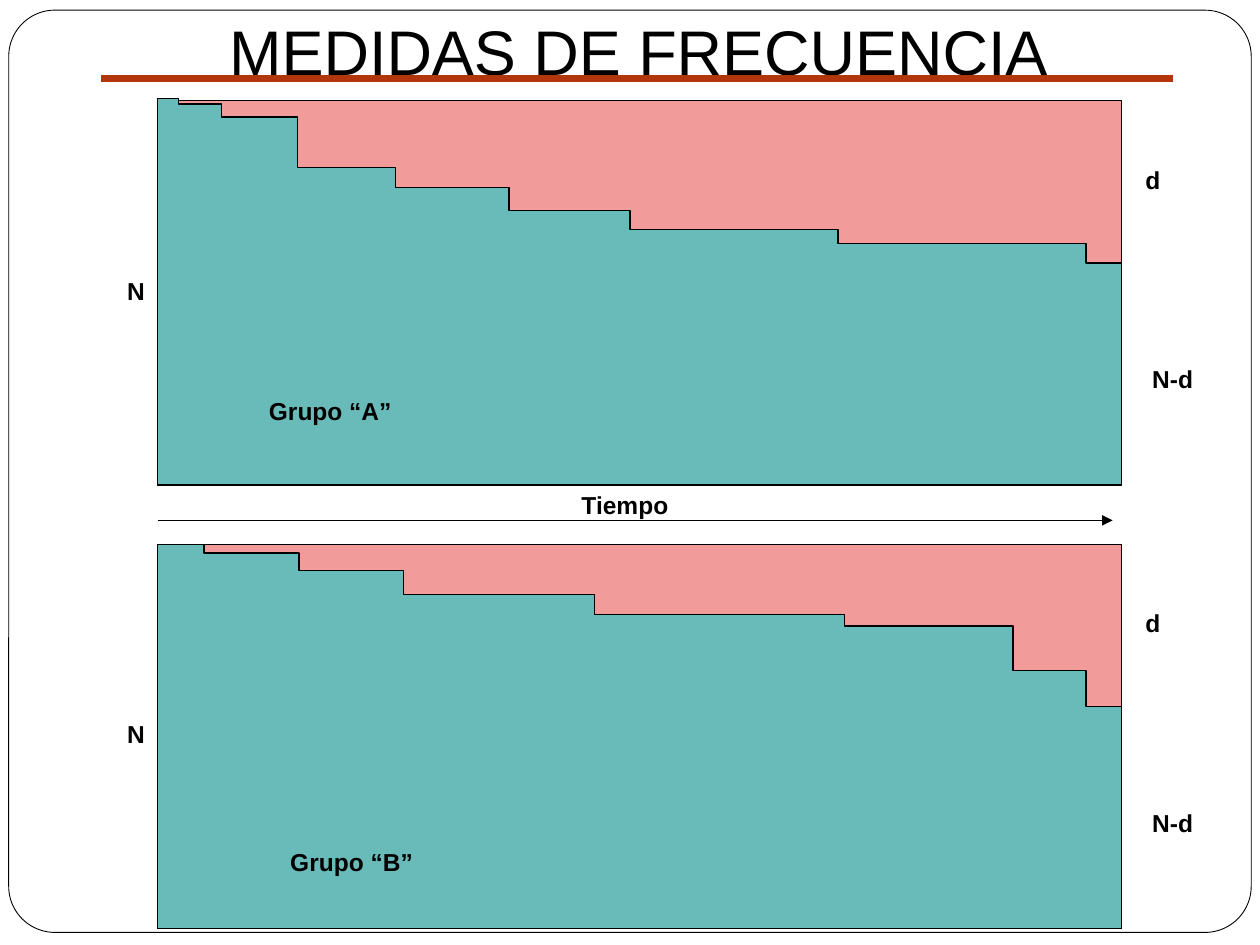
from dataclasses import dataclass
from lxml import etree
from pptx import Presentation
from pptx.dml.color import RGBColor as RGB
from pptx.enum.shapes import MSO_CONNECTOR as CONN, MSO_SHAPE as SHAPE
from pptx.enum.text import MSO_ANCHOR as ANCHOR, PP_ALIGN as ALIGN
from pptx.oxml.ns import qn
from pptx.util import Pt


@dataclass(frozen=True)
class Theme:
    font: str = "Arial"
    title: float = 36
    label: float = 14
    ink: RGB = RGB(0, 0, 0)
    paper: RGB = RGB(0xFF, 0xFF, 0xFF)
    rule: RGB = RGB(0xB1, 0x36, 0x0B)
    lost: RGB = RGB(0xF1, 0x9B, 0x9B)
    kept: RGB = RGB(0x69, 0xBB, 0xB9)


THEME = Theme()
LEFT, WIDTH, HEIGHT = 90, 550.8, 219.7

# Each step: right edge, drop below the panel top
STEPS_A = [(102.2, -1), (126.7, 1.9), (169.9, 9.4), (226.1, 38.2), (290.9, 49.7),
           (360, 63), (478.8, 73.8), (620.6, 81.7), (640.8, 92.9)]
STEPS_B = [(116.6, 0), (170.8, 5), (230.4, 15.1), (339.8, 28.8), (482.6, 40.3),
           (578.9, 46.8), (620.6, 72), (640.8, 92.9)]


def paint(shape, fill, width):
    shape.shadow.inherit = False
    shape.fill.solid()
    shape.fill.fore_color.rgb = fill
    shape.line.color.rgb = THEME.ink
    shape.line.width = Pt(width)


def add_text(slide, text, box, align=ALIGN.LEFT, size=THEME.label, bold=True,
             anchor=ANCHOR.TOP):
    frame = slide.shapes.add_textbox(*map(Pt, box)).text_frame
    frame.word_wrap = True
    frame.vertical_anchor = anchor
    frame.margin_left = frame.margin_right = Pt(0.7)
    frame.margin_top = frame.margin_bottom = Pt(0.7)
    par = frame.paragraphs[0]
    par.text = text
    par.alignment = align
    par.font.name = THEME.font
    par.font.size = Pt(size)
    par.font.bold = bold
    par.font.color.rgb = THEME.ink


def add_line(slide, start, end, y, color, width, arrow=False):
    line = slide.shapes.add_connector(CONN.STRAIGHT, Pt(start), Pt(y), Pt(end), Pt(y))
    line.line.color.rgb = color
    line.line.width = Pt(width)
    if arrow:
        etree.SubElement(line.line._get_or_add_ln(), qn("a:tailEnd"), type="triangle")
    etree.SubElement(line._element.spPr, qn("a:effectLst"))


def add_area(slide, points, fill):
    first, *rest = [(Pt(x), Pt(y)) for x, y in points]
    form = slide.shapes.build_freeform(*first, scale=1.0)
    form.add_line_segments(rest, close=True)
    paint(form.convert_to_shape(), fill, 0.75)


def add_panel(slide, top, steps, name, spot):
    right, base = LEFT + WIDTH, top + HEIGHT
    add_area(slide, [(LEFT, top), (right, top), (right, base), (LEFT, base)], THEME.lost)

    # Staircase of those who remain
    points, x = [(LEFT, base)], LEFT
    for edge, drop in steps:
        points += [(x, top + drop), (edge, top + drop)]
        x = edge
    add_area(slide, points + [(right, base)], THEME.kept)

    # Labels
    add_text(slide, "N", (72, top + 99.4, 21, 28.8))
    add_text(slide, "d", (653.8, top + 36, 31.7, 28.8))
    add_text(slide, "N-d", (657.7, top + 149.8, 40, 28.1))
    add_text(slide, name, (*spot, 149.8, 23.8), ALIGN.CENTER)


def main():
    deck = Presentation()
    deck.slide_width, deck.slide_height = Pt(720), Pt(540)
    slide = deck.slides.add_slide(deck.slide_layouts[6])

    # Frame
    frame = slide.shapes.add_shape(SHAPE.ROUNDED_RECTANGLE, Pt(5), Pt(5.8), Pt(710), Pt(527))
    frame.adjustments[0] = 0.05
    paint(frame, THEME.paper, 0.5)

    # Groups and time axis
    add_panel(slide, 57.5, STEPS_A, "Grupo “A”", (113.8, 225.4))
    add_text(slide, "Tiempo", (324, 279.4, 66.2, 23.8), ALIGN.CENTER)
    add_line(slide, LEFT, 635.8, 297.4, THEME.ink, 0.75, arrow=True)
    add_panel(slide, 311, STEPS_B, "Grupo “B”", (126, 483.1))

    # Title
    add_text(slide, "MEDIDAS DE FRECUENCIA", (59, 5.8, 612, 45.4), ALIGN.CENTER,
             THEME.title, False, ANCHOR.MIDDLE)
    add_line(slide, 57.6, 670.3, 44.6, THEME.rule, 4)

    deck.save("out.pptx")


if __name__ == "__main__":
    main()
